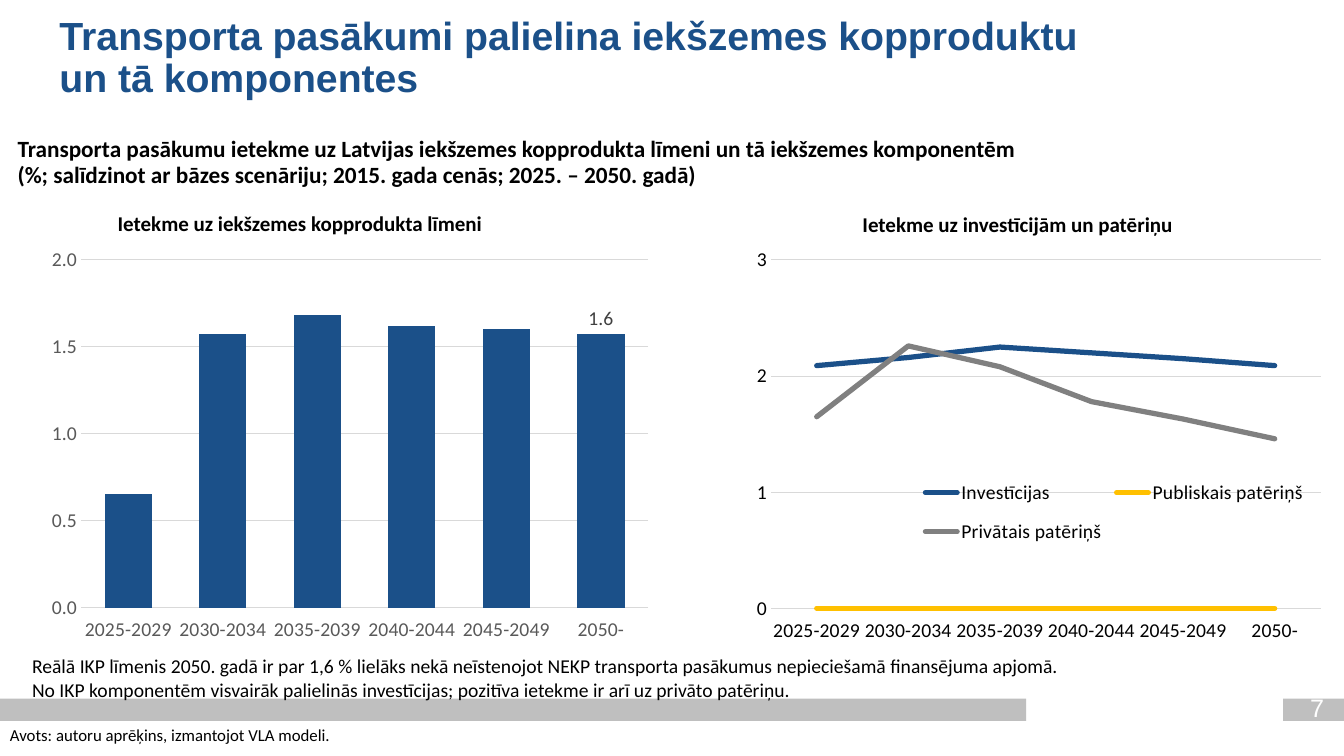
from lxml import etree
from pptx import Presentation
from pptx import util as u
from pptx.chart.data import CategoryChartData
from pptx.dml.color import RGBColor
from pptx.enum import chart as ch, shapes, text
from pptx.oxml.ns import qn

COLORS = {"blue": "1B5089", "yellow": "FFC000", "gray": "808080", "bar": "BFBFBF",
          "grid": "D9D9D9", "axis": "595959", "label": "404040",
          "black": "000000", "white": "FFFFFF"}
RGB = {name: RGBColor.from_string(value) for name, value in COLORS.items()}
PERIODS = ["2025-2029", "2030-2034", "2035-2039", "2040-2044", "2045-2049", "2050-"]


def style_font(font, size, color, name="Calibri", bold=False):
    font.size, font.name, font.bold = u.Pt(size), name, bold
    font.color.rgb = RGB[color]


def set_layout(parent, index, **fractions):
    """Place a plot area or legend by fractions of the chart's size."""
    for old in parent.findall(qn("c:layout")):
        parent.remove(old)
    layout = etree.Element(qn("c:layout"))
    manual = etree.SubElement(layout, qn("c:manualLayout"))
    if parent.tag == qn("c:plotArea"):
        etree.SubElement(manual, qn("c:layoutTarget")).set("val", "inner")
    for mode in ("xMode", "yMode"):
        etree.SubElement(manual, qn("c:" + mode)).set("val", "edge")
    for key, value in fractions.items():
        etree.SubElement(manual, qn("c:" + key)).set("val", str(value))
    parent.insert(index, layout)


prs = Presentation()
prs.slide_width, prs.slide_height = u.Pt(960), u.Pt(540)
s = prs.slides.add_slide(prs.slide_layouts[5])

# Footer bars
for left, width in [(0, 733), (916.5, 43.5)]:
    sp = s.shapes.add_shape(shapes.MSO_SHAPE.RECTANGLE, u.Pt(left), u.Pt(499),
                            u.Pt(width), u.Pt(16))
    sp.shadow.inherit = False
    sp.fill.solid()
    sp.fill.fore_color.rgb = RGB["bar"]
    sp.line.fill.background()

# Title
title = s.shapes.title
title.left, title.top, title.width, title.height = u.Pt(35.3), u.Pt(8), u.Pt(909), u.Pt(86)
tf = title.text_frame
tf.text = "Transporta pasākumi palielina iekšzemes kopproduktu\nun tā komponentes"
tf.vertical_anchor = text.MSO_ANCHOR.TOP
tf.auto_size = text.MSO_AUTO_SIZE.NONE
for p in tf.paragraphs:
    p.alignment, p.line_spacing = text.PP_ALIGN.LEFT, 0.9
    style_font(p.runs[0].font, 28, "blue", "Arial", True)

# Charts: type, box, plot area, number format, maximum, step, axis colour, series
charts = [
    (ch.XL_CHART_TYPE.COLUMN_CLUSTERED, (21.6, 172.8, 448.6, 295.2),
     dict(x=0.081, y=0.043, w=0.903, h=0.842), "#,##0.0", 2, 0.5, "axis",
     [("Series 1", [0.65, 1.57, 1.68, 1.62, 1.6, 1.57], "blue")]),
    (ch.XL_CHART_TYPE.LINE, (504.7, 175, 455, 315.4),
     dict(x=0.101, y=0.034, w=0.863, h=0.789), "#,##0", 3, 1, "black",
     [("Investīcijas", [2.09, 2.16, 2.25, 2.2, 2.15, 2.09], "blue"),
      ("Publiskais patēriņš", [0] * 6, "yellow"),
      ("Privātais patēriņš", [1.65, 2.26, 2.08, 1.78, 1.63, 1.46], "gray")]),
]
for kind, box, plot_box, number_format, top, step, axis_color, series in charts:
    data = CategoryChartData(number_format="0.0")
    data.categories = PERIODS
    for name, values, _ in series:
        data.add_series(name, values)
    chart = s.shapes.add_chart(kind, *[u.Pt(v) for v in box], data).chart
    chart.has_title = False
    style_font(chart.font, 14, "black")

    cat, val = chart.category_axis, chart.value_axis
    for axis in (cat, val):
        axis.major_tick_mark = axis.minor_tick_mark = ch.XL_TICK_MARK.NONE
        style_font(axis.tick_labels.font, 14, axis_color)
    cat.tick_label_position = ch.XL_TICK_LABEL_POSITION.LOW
    val.minimum_scale, val.maximum_scale, val.major_unit = 0, top, step
    val.tick_labels.number_format = number_format
    val.tick_labels.number_format_is_linked = False
    val.format.line.fill.background()
    for line in (cat.format.line, val.major_gridlines.format.line):
        line.color.rgb, line.width = RGB["grid"], u.Pt(0.75)

    plot = chart.plots[0]
    plot.vary_by_categories = False
    set_layout(chart._chartSpace.find(".//" + qn("c:plotArea")), 0, **plot_box)
    chart.has_legend = len(series) > 1
    for ser, (_, _, color) in zip(plot.series, series):
        if kind == ch.XL_CHART_TYPE.LINE:
            ser.smooth = False
            ser.marker.style = ch.XL_MARKER_STYLE.NONE
            ser.format.line.color.rgb, ser.format.line.width = RGB[color], u.Pt(3.75)
            ser._element.find("c:spPr/a:ln", ser._element.nsmap).set("cap", "rnd")
        else:
            plot.gap_width = 100
            ser.format.fill.solid()
            ser.format.fill.fore_color.rgb = RGB[color]
            last = ser.points[len(PERIODS) - 1].data_label
            style_font(last.font, 14, "label")
            last.position = ch.XL_LABEL_POSITION.OUTSIDE_END
    if chart.has_legend:
        legend = chart.legend
        legend.position = ch.XL_LEGEND_POSITION.BOTTOM
        legend.include_in_layout = False
        style_font(legend.font, 14, "black")
        set_layout(legend._element, 1, x=0.33, y=0.5, w=0.62, h=0.21)

# Text boxes: text, box, size, bold, line spacing
labels = [
    ("Transporta pasākumu ietekme uz Latvijas iekšzemes kopprodukta līmeni un tā iekšzemes "
     "komponentēm\n(%; salīdzinot ar bāzes scenāriju; 2015. gada cenās; 2025. – 2050. gadā)",
     (5.5, 95, 887, 47), 16.6, True, 0.9),
    ("Avots: autoru aprēķins, izmantojot VLA modeli.", (0, 514, 251, 22), 12, False, 1),
    ("Ietekme uz iekšzemes kopprodukta līmeni", (77, 147, 277, 25), 15, True, 1),
    ("Ietekme uz investīcijām un patēriņu", (609, 147.6, 238, 25), 15, True, 1),
    ("Reālā IKP līmenis 2050. gadā ir par 1,6 % lielāks nekā neīstenojot NEKP transporta "
     "pasākumus nepieciešamā finansējuma apjomā.\nNo IKP komponentēm visvairāk palielinās "
     "investīcijas; pozitīva ietekme ir arī uz privāto patēriņu.",
     (15.8, 463.7, 901, 41), 14, False, 1),
]
for words, box, size, bold, spacing in labels:
    tf = s.shapes.add_textbox(*[u.Pt(v) for v in box]).text_frame
    tf.word_wrap = True
    tf.text = words
    for p in tf.paragraphs:
        p.line_spacing = spacing
        style_font(p.runs[0].font, size, "black", bold=bold)

# Page number
tf = s.shapes.add_textbox(u.Pt(917), u.Pt(492.5), u.Pt(47.5), u.Pt(26)).text_frame
tf.word_wrap = True
tf.vertical_anchor = text.MSO_ANCHOR.MIDDLE
tf.text = "7"
tf.paragraphs[0].alignment = text.PP_ALIGN.CENTER
style_font(tf.paragraphs[0].runs[0].font, 18, "white", "Arial")

prs.save("out.pptx")
